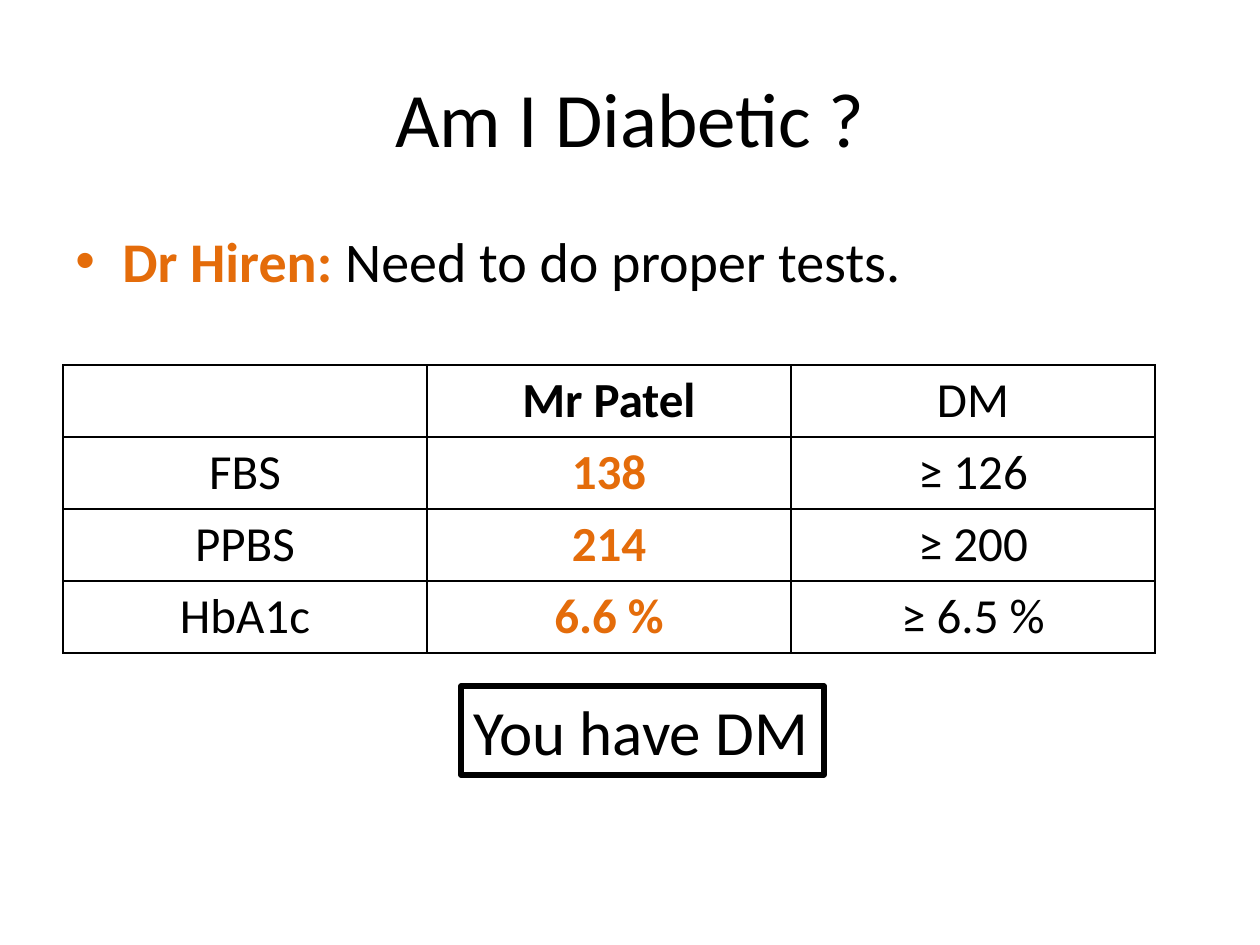
"""Build the "Am I Diabetic ?" slide: a remark, a table of test results and a verdict."""
from pptx import Presentation
from pptx.dml.color import RGBColor
from pptx.enum.shapes import MSO_SHAPE
from pptx.enum.text import MSO_ANCHOR, MSO_AUTO_SIZE, PP_ALIGN
from pptx.oxml import parse_xml
from pptx.oxml.ns import nsdecls
from pptx.util import Pt

TITLE = "Am I Diabetic ?"
REMARK = [("Dr Hiren: ", True), ("Need to do proper tests.", False)]
RESULTS = [
    ("", "Mr Patel", "DM"),
    ("FBS", "138", "≥ 126"),
    ("PPBS", "214", "≥ 200"),
    ("HbA1c", "6.6 %", "≥ 6.5 %"),
]
VERDICT = "You have DM"
PATIENT_COLUMN = 1

THEME = {
    "font": "Calibri",
    "ink": RGBColor(0, 0, 0),
    "accent": RGBColor(0xE4, 0x6C, 0x0A),
    "title": Pt(44), "remark": Pt(32), "results": Pt(28), "verdict": Pt(36),
    "grid": Pt(1), "frame": Pt(3),
}

PX = 914400 // 126
SLIDE = (1260, 945)
TITLE_BOX = (63, 38, 1134, 157)
REMARK_BOX = (63, 220, 1134, 624)
VERDICT_BOX = (461, 686, 363, 89)
TABLE_LEFT, TABLE_TOP = 63, 365
COLUMN_WIDTH, ROW_HEIGHT = 364, 72
BULLET_INDENT = 47


def emu(*lengths):
    return [length * PX for length in lengths]


def write(paragraph, text, size, color="ink", bold=False):
    run = paragraph.add_run()
    run.text = text
    run.font.color.rgb = THEME[color]
    for attribute, value in {"name": THEME["font"], "size": THEME[size], "bold": bold}.items():
        setattr(run.font, attribute, value)


def add_bullet(paragraph):
    properties = paragraph._p.get_or_add_pPr()
    indent = BULLET_INDENT * PX
    properties.set("marL", str(indent))
    properties.set("indent", str(-indent))
    properties.append(parse_xml(f'<a:buFont {nsdecls("a")} typeface="Arial"/>'))
    properties.append(parse_xml(f'<a:buChar {nsdecls("a")} char="•"/>'))


def draw_borders(cell):
    properties = cell._tc.get_or_add_tcPr()
    for position, side in enumerate(("lnL", "lnR", "lnT", "lnB")):
        properties.insert(position, parse_xml(
            f'<a:{side} {nsdecls("a")} w="{THEME["grid"]}"><a:solidFill>'
            f'<a:srgbClr val="{THEME["ink"]}"/></a:solidFill></a:{side}>'))


def add_title(slide):
    frame = slide.shapes.add_textbox(*emu(*TITLE_BOX)).text_frame
    frame.word_wrap = True
    frame.vertical_anchor = MSO_ANCHOR.MIDDLE
    heading = frame.paragraphs[0]
    heading.alignment = PP_ALIGN.CENTER
    write(heading, TITLE, "title")


def add_remark(slide):
    frame = slide.shapes.add_textbox(*emu(*REMARK_BOX)).text_frame
    frame.word_wrap = True
    remark = frame.paragraphs[0]
    add_bullet(remark)
    for text, is_speaker in REMARK:
        write(remark, text, "remark", "accent" if is_speaker else "ink", is_speaker)


def add_results(slide):
    row_count, column_count = len(RESULTS), len(RESULTS[0])
    place = emu(TABLE_LEFT, TABLE_TOP, COLUMN_WIDTH * column_count, ROW_HEIGHT * row_count)
    results = slide.shapes.add_table(row_count, column_count, *place).table
    results.first_row = results.horz_banding = False
    for r, row in enumerate(RESULTS):
        for c, text in enumerate(row):
            cell = results.cell(r, c)
            cell.fill.background()
            draw_borders(cell)
            entry = cell.text_frame.paragraphs[0]
            entry.alignment = PP_ALIGN.CENTER
            is_patient = c == PATIENT_COLUMN
            if text:
                write(entry, text, "results", "accent" if is_patient and r else "ink", is_patient)


def add_verdict(slide):
    verdict = slide.shapes.add_shape(MSO_SHAPE.RECTANGLE, *emu(*VERDICT_BOX))
    verdict.shadow.inherit = False
    verdict.fill.background()
    verdict.line.color.rgb = THEME["ink"]
    verdict.line.width = THEME["frame"]
    frame = verdict.text_frame
    layout = {"word_wrap": False, "auto_size": MSO_AUTO_SIZE.SHAPE_TO_FIT_TEXT,
              "vertical_anchor": MSO_ANCHOR.TOP}
    for attribute, value in layout.items():
        setattr(frame, attribute, value)
    frame.paragraphs[0].alignment = PP_ALIGN.LEFT
    write(frame.paragraphs[0], VERDICT, "verdict")


def main():
    deck = Presentation()
    deck.slide_width, deck.slide_height = emu(*SLIDE)
    slide = deck.slides.add_slide(deck.slide_layouts[6])
    for add_part in (add_title, add_remark, add_results, add_verdict):
        add_part(slide)
    deck.save("out.pptx")


if __name__ == "__main__":
    main()
